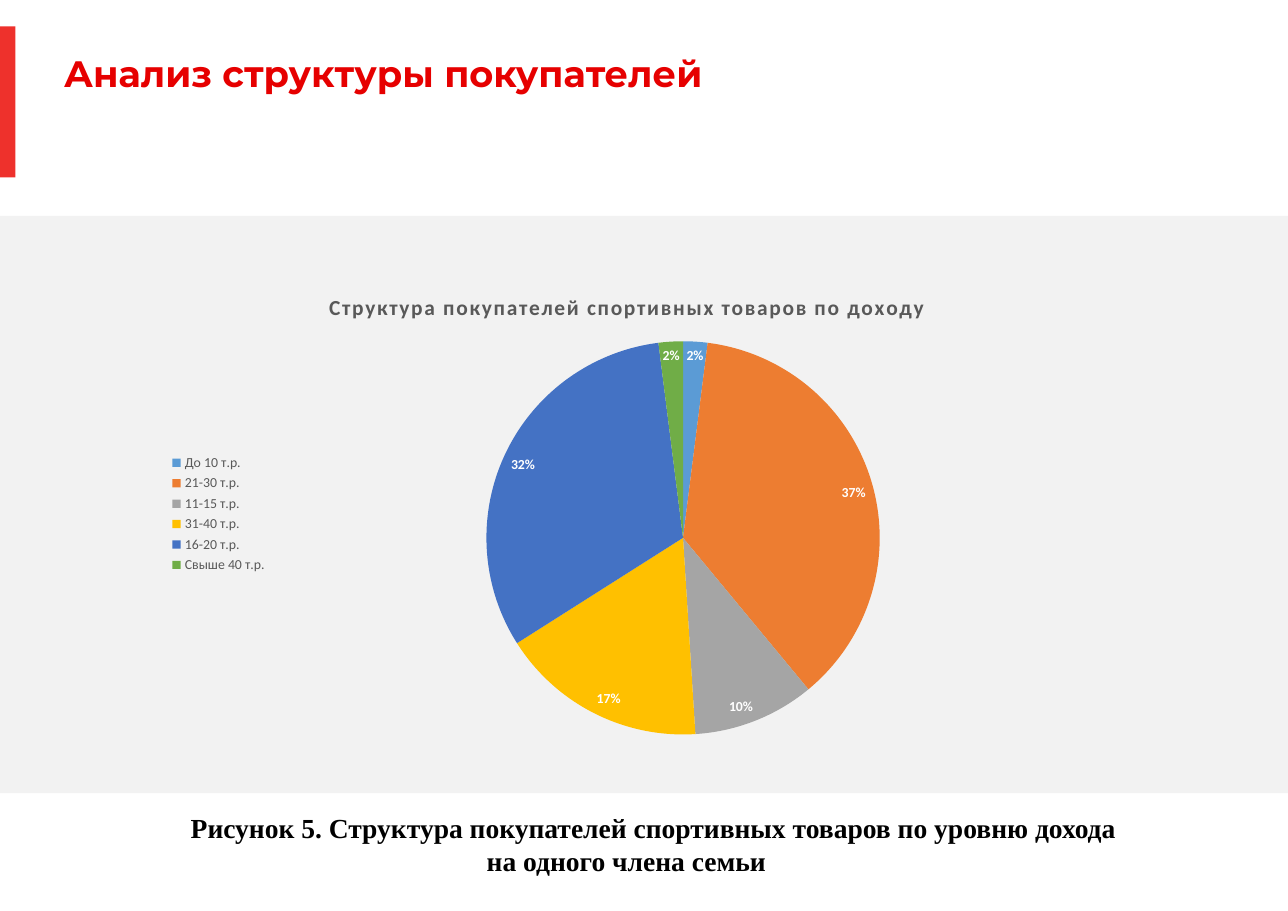
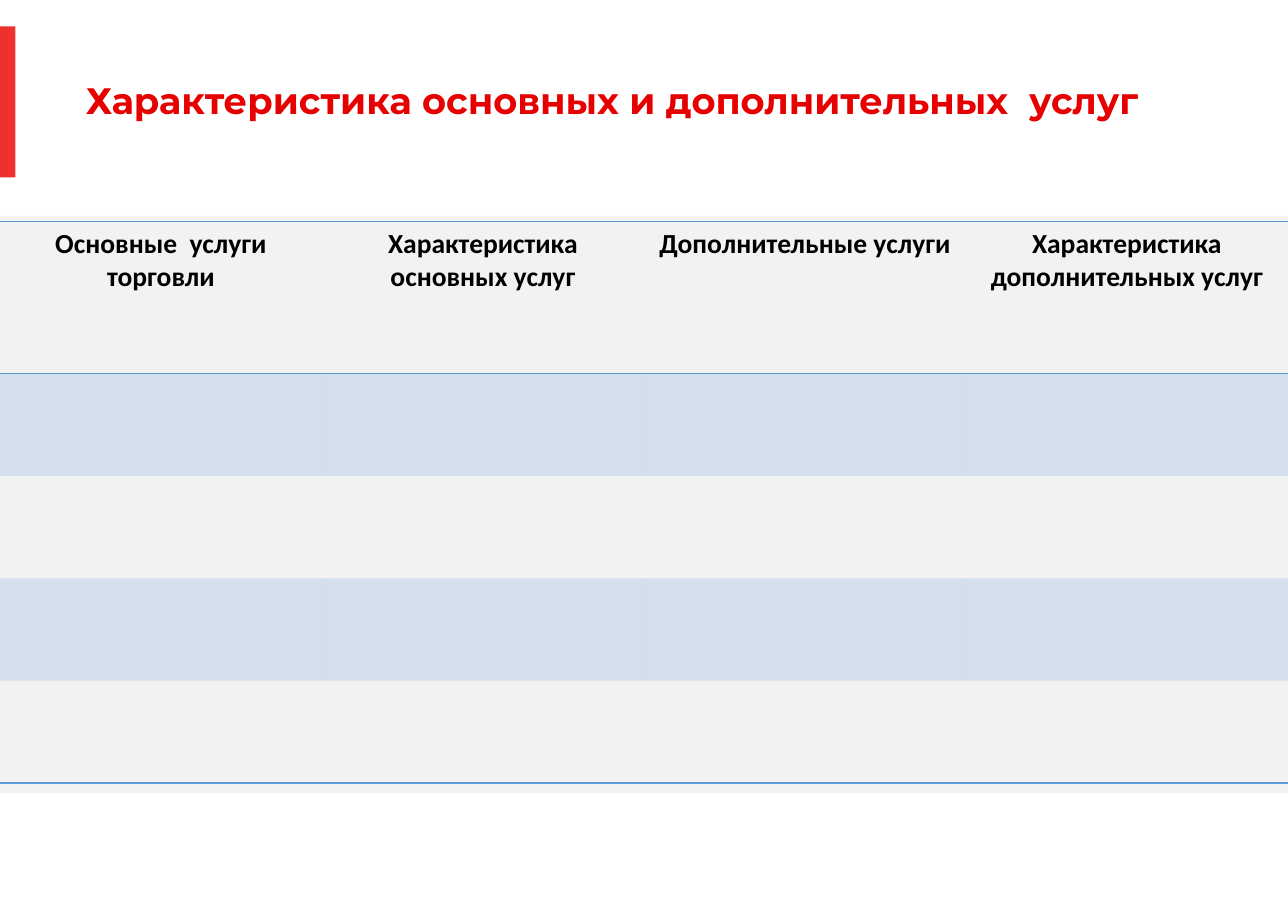
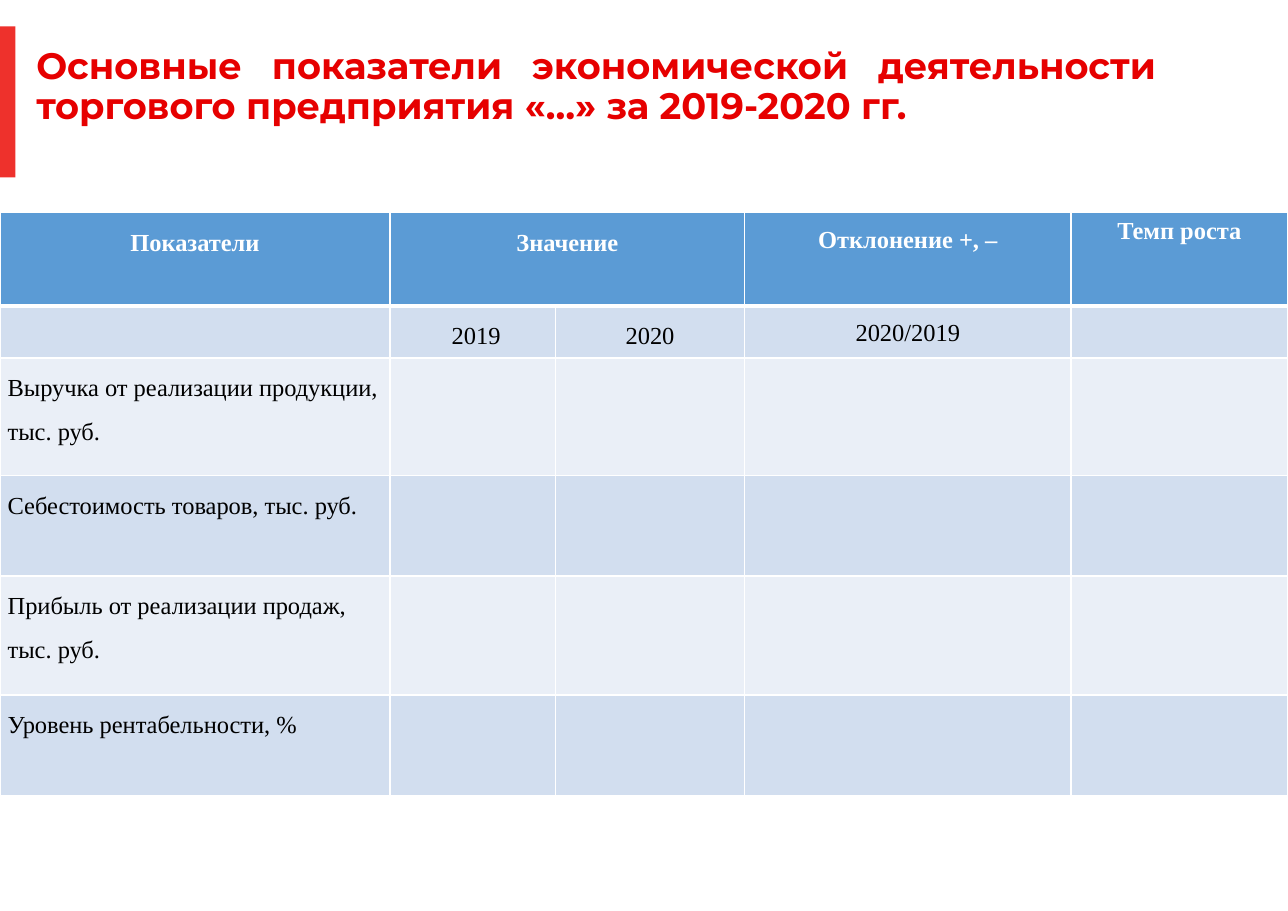
from lxml.etree import SubElement as Sub
from pptx import Presentation
from pptx.chart.data import CategoryChartData as Data
from pptx.dml.color import RGBColor
from pptx.enum.chart import XL_CHART_TYPE as Kind
from pptx.enum.chart import XL_LABEL_POSITION as Spot
from pptx.enum.chart import XL_LEGEND_POSITION as Side
from pptx.enum.shapes import MSO_SHAPE as Form
from pptx.enum.text import MSO_ANCHOR as Anchor
from pptx.enum.text import PP_ALIGN as Align
from pptx.oxml.ns import qn
from pptx.util import Inches, Pt

WIDE, HIGH = 11.69, 8.27
RED, BAR, GREY = "E60000", "EE312C", "F2F2F2"
BLUE, WHITE, BLACK, DIM = "5B9BD5", "FFFFFF", "000000", "595959"
BANDS = "D2DEEF", "EAEFF7"
HEAD, BODY, SERIF = "Montserrat", "Calibri", "Times New Roman"
PLAIN = "{2D5ABB26-0587-4C30-8999-92F81FD0307C}"  # table style without grid


def paint(color, value):
    color.rgb = RGBColor.from_string(value)


def style(font, size, color, name, bold=False):
    font.size, font.name, font.bold = Pt(size), name, bold
    paint(font.color, color)


def place(box):
    return [Inches(v) for v in box]


def write(frame, text, look, align=Align.LEFT, line=None, after=None, indent=0):
    """Fill a frame with one paragraph and format its run."""
    frame.word_wrap = True
    par = frame.paragraphs[0]
    par.text = text
    par.alignment = align
    if line:
        par.line_spacing = line
    if after:
        par.space_after = Pt(after)
    if indent:
        par._p.get_or_add_pPr().set("indent", str(Inches(indent)))
    style(par.runs[0].font, *look)


def block(slide, box, color):
    shape = slide.shapes.add_shape(Form.RECTANGLE, *place(box))
    shape.shadow.inherit = False
    shape.fill.solid()
    paint(shape.fill.fore_color, color)
    shape.line.fill.background()


def start(deck, title, box, align):
    """Blank slide with grey band, red bar and title."""
    slide = deck.slides.add_slide(deck.slide_layouts[6])
    block(slide, (0, 1.96, WIDE, 5.24), GREY)
    block(slide, (0, 0.24, 0.14, 1.37), BAR)
    frame = slide.shapes.add_textbox(*place(box)).text_frame
    frame.margin_left = frame.margin_right = 0
    frame.margin_top = frame.margin_bottom = 0
    frame.vertical_anchor = Anchor.MIDDLE
    write(frame, title, (24, RED, HEAD, True), align, 0.9)
    return slide


# Chart
def pie(slide, box, title, parts):
    data = Data()
    data.categories = [name for name, _, _ in parts]
    data.add_series("Series 1", [value for _, value, _ in parts])
    chart = slide.shapes.add_chart(Kind.PIE, *place(box), data).chart
    style(chart.font, 10, BLACK, BODY)

    frame = chart.chart_title.text_frame
    write(frame, title, (14, DIM, BODY, True), Align.CENTER)
    frame.paragraphs[0].runs[0]._r.get_or_add_rPr().set("spc", "100")
    chart.chart_title.include_in_layout = False

    chart.has_legend = True
    chart.legend.position = Side.LEFT
    chart.legend.include_in_layout = False
    style(chart.legend.font, 9, DIM, BODY)

    plot = chart.plots[0]
    plot.vary_by_categories = True
    for i, (_, _, color) in enumerate(parts):
        fill = plot.series[0].points[i].format.fill
        fill.solid()
        paint(fill.fore_color, color)
    plot.has_data_labels = True
    tags = plot.data_labels
    tags.show_percentage, tags.show_value = True, False
    tags.number_format, tags.number_format_is_linked = "0%", False
    tags.position = Spot.INSIDE_END
    style(tags.font, 9, WHITE, BODY, True)

    # Fixed plot area
    area = chart._chartSpace.find(".//" + qn("c:plotArea"))
    old = area.find(qn("c:layout"))
    if old is not None:
        area.remove(old)
    lay = area.makeelement(qn("c:layout"), {})
    area.insert(0, lay)
    man = Sub(lay, qn("c:manualLayout"))
    for tag, val in (("layoutTarget", "inner"), ("xMode", "edge"),
                     ("yMode", "edge"), ("x", "0.35"), ("y", "0.14"),
                     ("w", "0.42"), ("h", "0.82")):
        Sub(man, qn("c:" + tag)).set("val", val)


# Tables
def grid(slide, box, cols, rows):
    table = slide.shapes.add_table(len(rows), len(cols), *place(box)).table
    table.first_row = table.horz_banding = False
    table._tbl.tblPr.find(qn("a:tableStyleId")).text = PLAIN
    for col, size in zip(table.columns, cols):
        col.width = Inches(size)
    for row, size in zip(table.rows, rows):
        row.height = Inches(size)
    return table


def edge(cell, color, **sides):
    """Draw cell borders; call before the fill is set."""
    prop = cell._tc.get_or_add_tcPr()
    for side in "LRTB":
        if side in sides:
            line = Sub(prop, qn("a:ln" + side), w=str(Pt(sides[side])))
            Sub(Sub(line, qn("a:solidFill")), qn("a:srgbClr"), val=color)


def tint(cell, color, alpha=100):
    cell.fill.solid()
    paint(cell.fill.fore_color, color)
    if alpha < 100:
        tone = cell._tc.tcPr.find(".//" + qn("a:srgbClr"))
        Sub(tone, qn("a:alpha"), val=str(alpha * 1000))


def offers(slide, box, heads):
    """Table of services: header and four striped empty rows."""
    count = len(heads)
    rows = [1.38] + [0.93] * 4
    table = grid(slide, box, [box[2] / count] * count, rows)
    for c, head in enumerate(heads):
        cell = table.cell(0, c)
        write(cell.text_frame, head, (18, BLACK, BODY, True), Align.CENTER)
        edge(cell, BLUE, T=1, B=1)
        edge(table.cell(4, c), BLUE, B=1)
        for r in (1, 3):
            tint(table.cell(r, c), BLUE, 20)


def figures(slide, box, heads, years, names):
    """Table of indicators with a merged header over the years."""
    cols = [3.54, 1.5, 1.72, 2.96, 1.97]
    table = grid(slide, box, cols, [0.85, 0.47, 1.07, 0.91, 1.08, 0.91])
    for r in range(len(table.rows)):
        for c in range(len(cols)):
            cell = table.cell(r, c)
            edge(cell, WHITE, L=1, R=1, T=3 if r == 1 else 1,
                 B=1 if r else 3)
            tint(cell, BANDS[(r - 1) % 2] if r else BLUE)
    table.cell(0, 1).merge(table.cell(0, 2))

    def put(r, c, text, align=Align.CENTER, line=1.61, indent=0):
        cell = table.cell(r, c)
        cell.margin_left = cell.margin_right = Inches(0.07)
        cell.margin_top = cell.margin_bottom = 0
        look = (16, BLACK if r else WHITE, SERIF, not r)
        write(cell.text_frame, text, look, align, line, 0.6, indent)

    for c, head in zip((0, 1, 3), heads):
        put(0, c, head, line=1.5 if c == 3 else 1.61)
    write(table.cell(0, 4).text_frame, heads[3],
          (16, WHITE, SERIF, True), Align.CENTER)
    put(1, 1, years[0], Align.LEFT, indent=0.49)
    put(1, 2, years[1])
    put(1, 3, years[2], line=1.5)
    for r, name in enumerate(names, 2):
        put(r, 0, name, Align.LEFT)


def main():
    deck = Presentation()
    deck.slide_width, deck.slide_height = Inches(WIDE), Inches(HIGH)

    # Buyers by income
    slide = start(deck, "Анализ структуры покупателей",
                  (0.58, 0.51, 10.59, 0.36), Align.LEFT)
    pie(slide, (1.44, 2.48, 8.5, 4.37),
        "Структура покупателей спортивных товаров по доходу",
        [("До 10 т.р.", 2, BLUE), ("21-30 т.р.", 37, "ED7D31"),
         ("11-15 т.р.", 10, "A5A5A5"), ("31-40 т.р.", 17, "FFC000"),
         ("16-20 т.р.", 32, "4472C4"), ("Свыше 40 т.р.", 2, "70AD47")])
    note = slide.shapes.add_textbox(*place((1.12, 7.31, 9.13, 0.7)))
    write(note.text_frame, "Рисунок 5. Структура покупателей спортивных "
          "товаров по уровню дохода на одного члена семьи",
          (18, BLACK, SERIF, True), Align.CENTER, indent=0.49)

    # Services
    slide = start(deck, "Характеристика основных и дополнительных  услуг",
                  (0.26, 0.75, 10.59, 0.36), Align.CENTER)
    offers(slide, (0, 2.01, WIDE, 5.1),
           ["Основные  услуги торговли", "Характеристика основных услуг",
            "Дополнительные услуги", "Характеристика дополнительных услуг"])

    # Indicators
    slide = start(deck, "Основные показатели экономической деятельности "
                  "торгового предприятия «…» за 2019-2020 гг.",
                  (0.33, 0.43, 10.16, 0.73), Align.JUSTIFY)
    figures(slide, (0, 1.93, WIDE, 5.29),
            ["Показатели", "Значение", "Отклонение +, –", "Темп роста"],
            ["2019", "2020", "2020/2019"],
            ["Выручка от реализации продукции, тыс. руб.",
             "Себестоимость товаров, тыс. руб.",
             "Прибыль от реализации продаж, тыс. руб.",
             "Уровень рентабельности, %"])

    deck.save("out.pptx")


if __name__ == "__main__":
    main()
